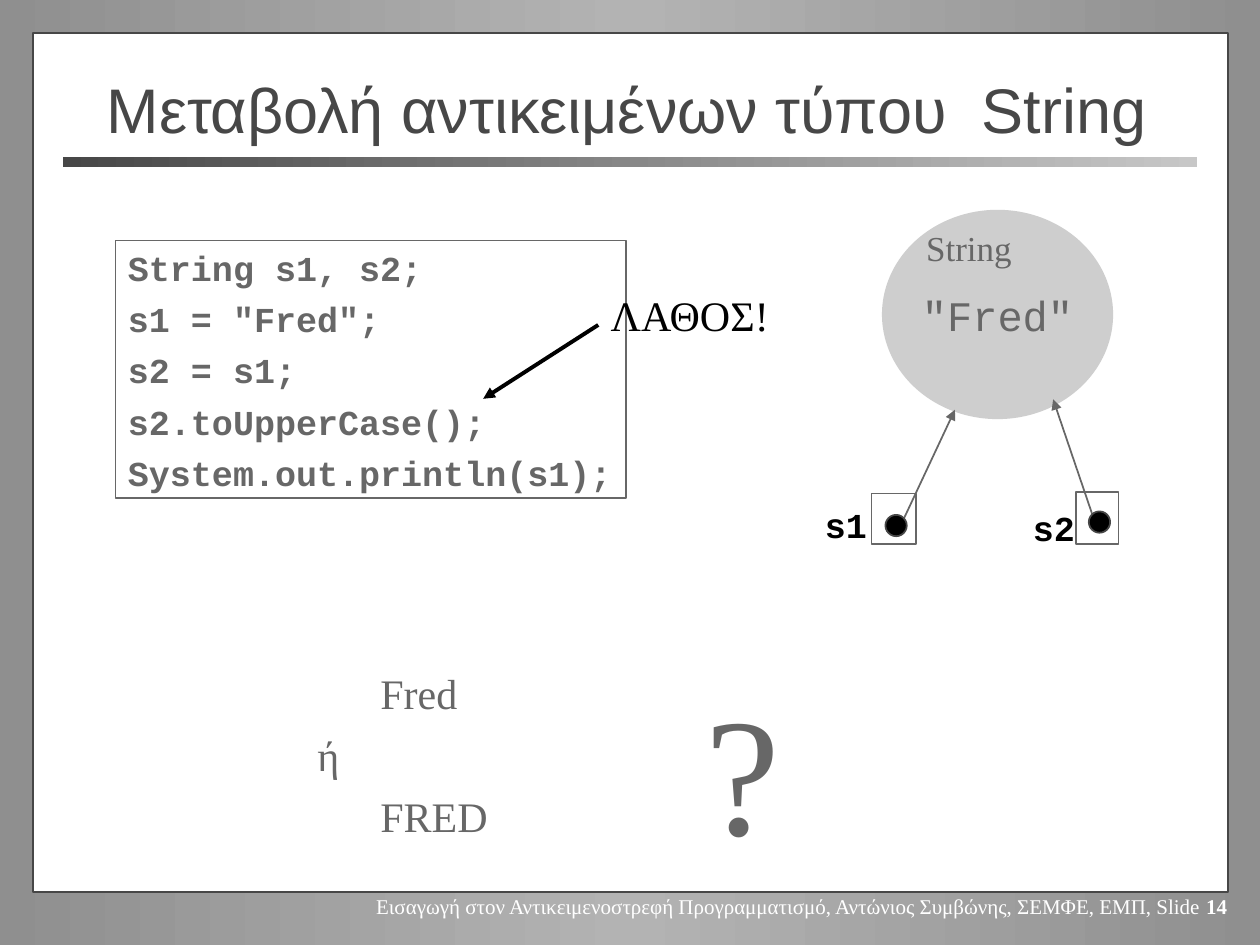
from copy import deepcopy

from lxml import etree
from pptx import Presentation
from pptx import util as u
from pptx.dml.color import RGBColor
from pptx.enum import shapes, text
from pptx.oxml import ns

WHITE = RGBColor(0xFF, 0xFF, 0xFF)
BLACK = RGBColor(0, 0, 0)
DARK = RGBColor(0x47, 0x47, 0x47)
GREY = RGBColor(0x67, 0x67, 0x67)
LIGHT = RGBColor(0xCE, 0xCE, 0xCE)
PALE = RGBColor(0xC7, 0xC7, 0xC7)
EDGE = RGBColor(0x8F, 0x8F, 0x8F)
CORE = RGBColor(0xB3, 0xB3, 0xB3)
SERIF, SANS, MONO = "Times New Roman", "Arial", "Courier New"
RECT, OVAL = shapes.MSO_SHAPE.RECTANGLE, shapes.MSO_SHAPE.OVAL
LEFT, MID, RIGHT = text.PP_ALIGN.LEFT, text.PP_ALIGN.CENTER, text.PP_ALIGN.RIGHT


class Board:
    gap = 0.26
    thin = 1

    def __init__(self, slide):
        self.slide = slide

    def shade(self, owner, fill, tones):
        fill.gradient()
        fill.gradient_angle = 0
        stops = owner.element.xpath(".//a:gsLst")[0]
        while len(stops) < len(tones):
            stops.append(deepcopy(stops[-1]))
        for i, (stop, tone) in enumerate(zip(fill.gradient_stops, tones)):
            stop.position = i / (len(tones) - 1)
            stop.color.rgb = tone

    def shape(self, kind, x, y, w, h, fill=None, line=None):
        item = self.slide.shapes.add_shape(kind, u.Cm(x), u.Cm(y), u.Cm(w), u.Cm(h))
        item.shadow.inherit = False
        if fill is None:
            item.fill.background()
        else:
            item.fill.solid()
            item.fill.fore_color.rgb = fill
        if line is None:
            item.line.fill.background()
        else:
            item.line.color.rgb = line
            item.line.width = u.Pt(self.thin)
        return item

    def box(self, x, y, w, h):
        return self.slide.shapes.add_textbox(u.Cm(x), u.Cm(y), u.Cm(w), u.Cm(h))

    def label(self, item, lines, size, font, tone, bold=False, align=LEFT,
              wrap=False, grow=True, gap=gap):
        frame = item.text_frame
        frame.word_wrap = wrap
        frame.auto_size = (text.MSO_AUTO_SIZE.SHAPE_TO_FIT_TEXT if grow
                           else text.MSO_AUTO_SIZE.NONE)
        frame.vertical_anchor = text.MSO_ANCHOR.TOP if grow else text.MSO_ANCHOR.MIDDLE
        for i, line in enumerate(lines):
            para = frame.paragraphs[0] if i == 0 else frame.add_paragraph()
            para.alignment = align
            para.space_before = u.Pt(round(size * gap, 1))
            self.run(para, line, size, font, tone, bold)
        return para

    def run(self, para, words, size, font, tone, bold=False):
        run = para.add_run()
        run.text = words
        run.font.size = u.Pt(size)
        run.font.name = font
        run.font.bold = bold
        run.font.color.rgb = tone

    def arrow(self, x1, y1, x2, y2, tone, width=thin):
        item = self.slide.shapes.add_connector(
            shapes.MSO_CONNECTOR.STRAIGHT, u.Cm(x1), u.Cm(y1), u.Cm(x2), u.Cm(y2))
        item.line.color.rgb = tone
        item.line.width = u.Pt(width)
        stroke = item.element.xpath("./p:spPr/a:ln")[0]
        tail = etree.SubElement(stroke, ns.qn("a:tailEnd"))
        tail.set("type", "triangle")
        etree.SubElement(item.element.spPr, ns.qn("a:effectLst"))


def main():
    deck = Presentation()
    deck.slide_width, deck.slide_height = u.Cm(25.4), u.Cm(19.05)
    slide = deck.slides.add_slide(deck.slide_layouts[6])
    board = Board(slide)

    board.shade(slide, slide.background.fill, [EDGE, CORE, EDGE])
    board.shape(RECT, 0.66, 0.66, 24.1, 17.32, WHITE, DARK)
    bar = board.shape(RECT, 1.27, 3.17, 22.86, 0.2)
    board.shade(bar, bar.fill, [DARK, PALE])

    foot = board.label(
        board.box(7.21, 17.88, 17.78, 0.76),
        ["Εισαγωγή στον Αντικειμενοστρεφή Προγραμματισμό, "
         "Αντώνιος Συμβώνης, ΣΕΜΦΕ, ΕΜΠ, Slide "],
        12, SERIF, WHITE, align=RIGHT, gap=0)
    board.run(foot, "14", 12, SERIF, WHITE, True)

    board.label(board.box(1.9, 1.4, 21.59, 1.57),
                ["Μεταβολή αντικειμένων τύπου  String"],
                36, SANS, DARK, wrap=True, grow=False, gap=0)

    code = ["String s1, s2;", 's1 = "Fred";', "s2 = s1;",
            "s2.toUpperCase();", "System.out.println(s1);"]
    board.label(board.shape(RECT, 2.33, 4.85, 10.29, 5.19, line=GREY),
                code, 20, MONO, GREY, True)

    board.label(board.box(6.15, 13.34, 8.71, 3.68), ["\tFred", "ή", "\tFRED"],
                24, SERIF, GREY, wrap=True)
    board.label(board.box(13.97, 13.34, 2.01, 4.32), ["?"], 96, SERIF, GREY)

    board.label(board.shape(OVAL, 17.78, 4.23, 4.66, 4.22, LIGHT), ['"Fred"'],
                24, MONO, GREY, align=MID, grow=False, gap=0)
    board.label(board.box(18.42, 4.45, 2.34, 1.09), ["String"],
                20, SERIF, GREY, wrap=True)

    board.arrow(18.19, 10.52, 19.25, 8.26, GREY)
    board.shape(RECT, 17.57, 9.95, 0.89, 1.02, line=GREY)
    board.arrow(22.07, 10.52, 21.23, 8.05, GREY)
    board.shape(RECT, 21.69, 9.92, 0.86, 1.05, line=GREY)

    board.label(board.box(12.06, 5.71, 3.73, 1.27), ["ΛΑΘΟΣ!"], 24, SERIF, BLACK)
    board.arrow(12.06, 6.55, 9.74, 8.04, BLACK, 2.25)

    for name, x, y in (("s1", 16.38, 10.03), ("s2", 20.57, 10.08)):
        board.label(board.box(x, y, 1.37, 1.12), [name], 20, MONO, BLACK, True)
    for x, y in ((17.85, 10.38), (21.95, 10.31)):
        board.shape(OVAL, x, y, 0.43, 0.43, BLACK, DARK)

    deck.save("out.pptx")


if __name__ == "__main__":
    main()
